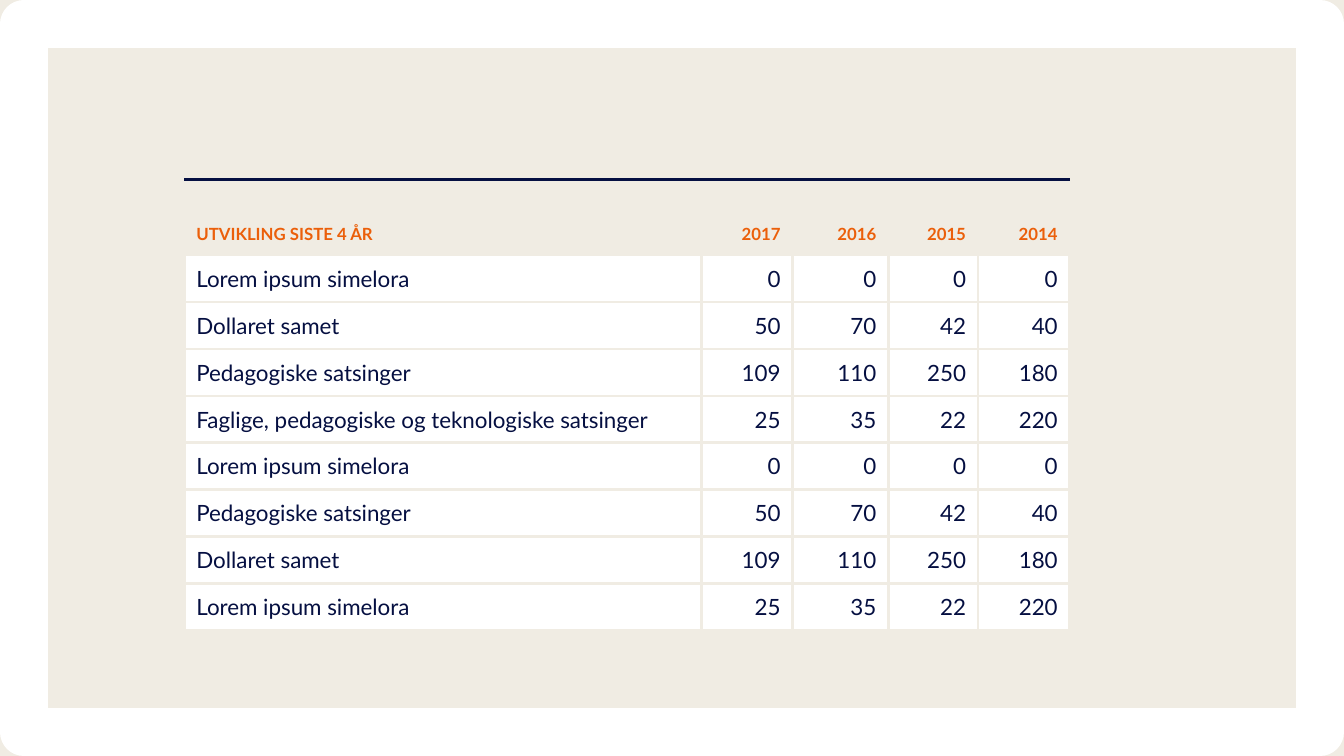
import lxml.etree
import pptx
import pptx.dml.color
import pptx.enum.shapes
import pptx.enum.text
import pptx.oxml.ns
import pptx.util

Pt = pptx.util.Pt
SAND = pptx.dml.color.RGBColor(0xF0, 0xEC, 0xE3)
WHITE = pptx.dml.color.RGBColor(0xFF, 0xFF, 0xFF)
NAVY = pptx.dml.color.RGBColor(0x05, 0x0F, 0x41)
ORANGE = pptx.dml.color.RGBColor(0xEB, 0x5F, 0x0A)

PAGE_WIDTH, PAGE_HEIGHT = 960, 540
FRAME_WEIGHT = 34
TABLE_LEFT, TABLE_TOP = 131.8, 152.6
RULE_TOP = 128.2
COLUMN_WIDTHS = [369.4, 64.8, 68.4, 64.1, 65.5]
ROW_HEIGHT = 29.6

HEADER = ["UTVIKLING SISTE 4 ÅR", "2017", "2016", "2015", "2014"]
SERIES = [
    [0, 0, 0, 0],
    [50, 70, 42, 40],
    [109, 110, 250, 180],
    [25, 35, 22, 220],
]
LABELS = [
    "Lorem ipsum simelora",
    "Dollaret samet",
    "Pedagogiske satsinger",
    "Faglige, pedagogiske og teknologiske satsinger",
    "Lorem ipsum simelora",
    "Pedagogiske satsinger",
    "Dollaret samet",
    "Lorem ipsum simelora",
]


class TablePage:
    """Draws the elements of one slide in a shared style."""

    font_name = "Lato"

    def __init__(self, deck):
        self.page = deck.slides.add_slide(deck.slide_layouts[6])
        self.page.background.fill.solid()
        self.page.background.fill.fore_color.rgb = SAND

    def frame(self, weight):
        box = self.page.shapes.add_shape(
            pptx.enum.shapes.MSO_SHAPE.RECTANGLE, Pt(weight / 2), Pt(weight / 2),
            Pt(PAGE_WIDTH - weight), Pt(PAGE_HEIGHT - weight))
        box.shadow.inherit = False
        box.fill.background()
        box.line.color.rgb = WHITE
        box.line.width = Pt(weight)

    def rule(self, left, top, width):
        line = self.page.shapes.add_connector(
            pptx.enum.shapes.MSO_CONNECTOR.STRAIGHT,
            Pt(left + width), Pt(top), Pt(left), Pt(top))
        line.line.color.rgb = NAVY
        line.line.width = Pt(1.5)
        properties = line._element.spPr
        lxml.etree.SubElement(properties, pptx.oxml.ns.qn("a:effectLst"))

    def table(self, left, top, widths, row_height, rows):
        table = self.page.shapes.add_table(
            len(rows), len(widths), Pt(left), Pt(top),
            Pt(sum(widths)), Pt(row_height * len(rows))).table
        table.first_row = False
        table.horz_banding = False
        for column, width in zip(table.columns, widths):
            column.width = Pt(width)
        for row_index, values in enumerate(rows):
            table.rows[row_index].height = Pt(row_height)
            for column_index, value in enumerate(values):
                self.cell(table.cell(row_index, column_index), str(value),
                          row_index == 0, column_index > 0)

    def cell(self, cell, text, is_header, is_number):
        self.borders(cell)
        if is_header:
            cell.fill.background()
        else:
            cell.fill.solid()
            cell.fill.fore_color.rgb = WHITE
        cell.margin_left = cell.margin_right = Pt(8.5)
        cell.margin_top = cell.margin_bottom = Pt(7.2)
        cell.vertical_anchor = pptx.enum.text.MSO_ANCHOR.MIDDLE
        cell.text_frame.text = text
        para = cell.text_frame.paragraphs[0]
        alignment = pptx.enum.text.PP_ALIGN
        para.alignment = alignment.RIGHT if is_number else alignment.LEFT
        font = para.runs[0].font
        font.name = self.font_name
        font.size = Pt(12 if is_header else 16)
        font.bold = is_header
        font.color.rgb = ORANGE if is_header else NAVY

    def borders(self, cell):
        qn = pptx.oxml.ns.qn
        properties = cell._tc.get_or_add_tcPr()
        for side in ("a:lnL", "a:lnR", "a:lnT", "a:lnB"):
            line = lxml.etree.SubElement(properties, qn(side), w=str(Pt(2.25)))
            fill = lxml.etree.SubElement(line, qn("a:solidFill"))
            lxml.etree.SubElement(fill, qn("a:srgbClr"), val=str(SAND))


def main():
    deck = pptx.Presentation()
    deck.slide_width = Pt(PAGE_WIDTH)
    deck.slide_height = Pt(PAGE_HEIGHT)
    page = TablePage(deck)
    page.frame(FRAME_WEIGHT)
    page.rule(TABLE_LEFT, RULE_TOP, sum(COLUMN_WIDTHS))
    rows = [[label, *SERIES[index % len(SERIES)]]
            for index, label in enumerate(LABELS)]
    page.table(TABLE_LEFT, TABLE_TOP, COLUMN_WIDTHS, ROW_HEIGHT, [HEADER, *rows])
    deck.save("out.pptx")


if __name__ == "__main__":
    main()
